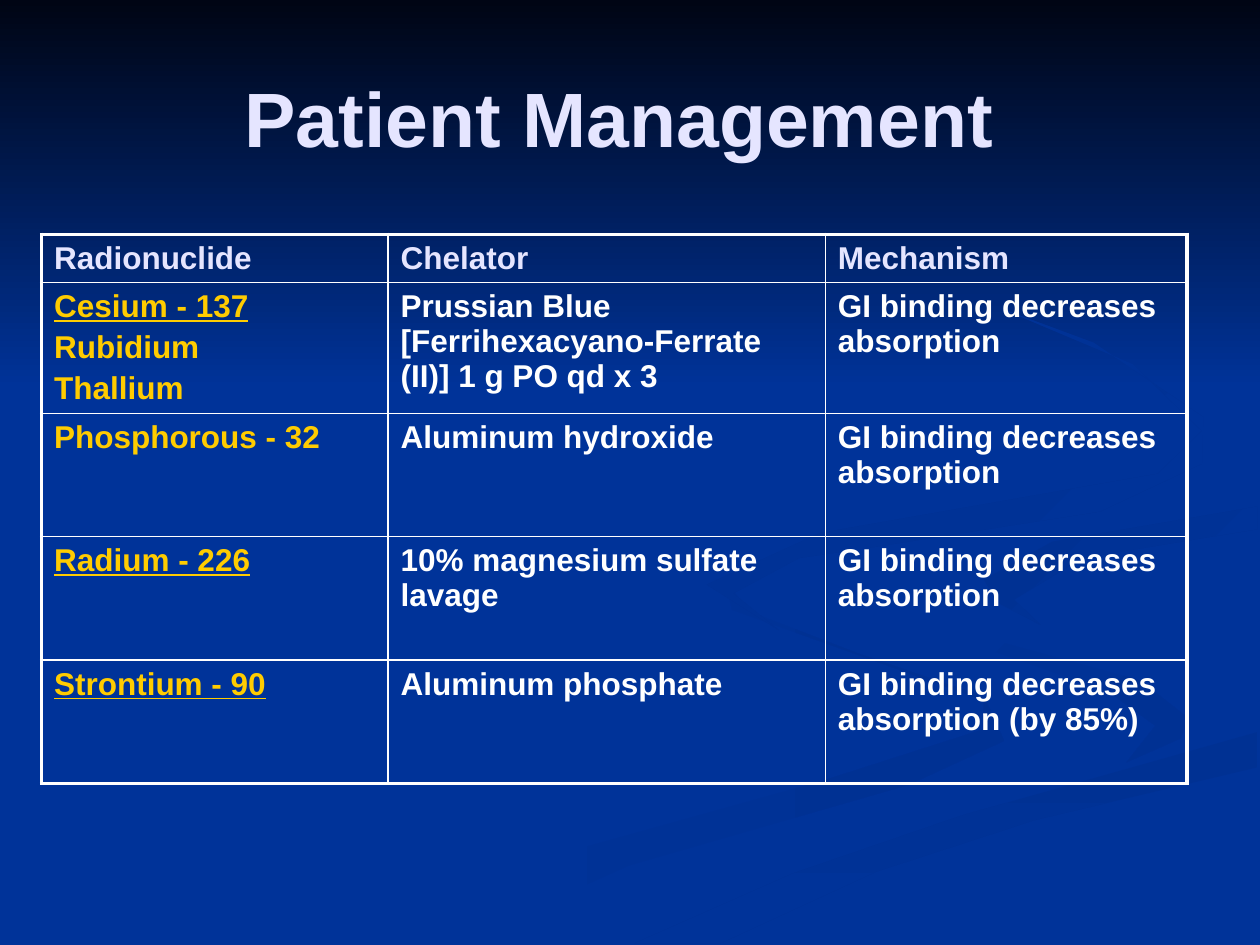
from dataclasses import dataclass

from lxml import etree
from pptx import Presentation
from pptx.dml.color import RGBColor
from pptx.enum.shapes import MSO_SHAPE
from pptx.enum.text import MSO_ANCHOR, PP_ALIGN
from pptx.oxml.ns import qn
from pptx.util import Pt

PX = 9144  # EMU per px, 100 px to the inch
TITLE_ONLY = 5
RECTANGLE = MSO_SHAPE.RECTANGLE
MIDDLE, CENTER = MSO_ANCHOR.MIDDLE, PP_ALIGN.CENTER


@dataclass(frozen=True)
class Theme:
    font: str = "Arial"
    blue: str = "003399"
    night: str = "000514"
    shade: str = "003193"
    pale: str = "E5E5FF"
    gold: str = "FFCC00"
    white: str = "FFFFFF"
    title_size: int = 44
    body_size: int = 18
    para_gap: float = 3.5
    frame: float = 2.25
    rule: float = 1


THEME = Theme()

# Outline points, start colour, end colour, clockwise gradient angle
SWIRLS = [
    ([(781, 553), (682, 519), (594, 485), (575, 459), (581, 484), (679, 519),
      (781, 556), (780, 579), (652, 620), (458, 674), (300, 749), (361, 749),
      (499, 687), (721, 623), (797, 588)], THEME.blue, THEME.shade, 0),
    ([(943, 570), (905, 540), (792, 509), (724, 464), (755, 505), (880, 549),
      (917, 576), (894, 605), (937, 586)], THEME.blue, THEME.shade, 45),
    ([(503, 749), (571, 749), (695, 692), (821, 651), (998, 609), (998, 581),
      (764, 647), (630, 693)], THEME.shade, THEME.blue, 90),
    ([(781, 460), (791, 478), (826, 496), (805, 476), (859, 443), (998, 420),
      (998, 402), (835, 430)], THEME.shade, THEME.blue, 45),
    ([(695, 434), (873, 406), (954, 368), (955, 331), (868, 272), (795, 245),
      (899, 289), (954, 342), (919, 376), (651, 423), (561, 464), (618, 500),
      (582, 471), (634, 443)], THEME.shade, THEME.blue, 45),
]

HEADINGS = ["Radionuclide", "Chelator", "Mechanism"]
BINDING = "GI binding decreases absorption"
TREATMENTS = [
    ["Cesium - 137\nRubidium\nThallium",
     "Prussian Blue [Ferrihexacyano-Ferrate (II)] 1 g PO qd x 3", BINDING],
    ["Phosphorous - 32", "Aluminum hydroxide", BINDING],
    ["Radium - 226", "10% magnesium sulfate lavage", BINDING],
    ["Strontium - 90", "Aluminum phosphate", BINDING + " (by 85%)"],
]
UNDERLINED = {"Cesium - 137", "Radium - 226", "Strontium - 90"}
COLUMN_WIDTHS = [275, 347, 287]
ROW_HEIGHTS = [38, 104, 98, 98, 98]


def px(*lengths):
    return [length * PX for length in lengths]


def style_font(font, size, color):
    font.name, font.size, font.bold = THEME.font, Pt(size), True
    font.color.rgb = RGBColor.from_string(color)


def paint_gradient(shape, start, end, angle):
    shape.shadow.inherit = False
    shape.line.fill.background()
    shape.fill.gradient()
    shape.fill.gradient_angle = -angle % 360
    for stop, color in zip(shape.fill.gradient_stops, (start, end)):
        stop.color.rgb = RGBColor.from_string(color)


def add_backdrop(page, box):
    left, top, width, height = box
    page.background.fill.solid()
    page.background.fill.fore_color.rgb = RGBColor.from_string(THEME.blue)
    sky = page.shapes.add_shape(RECTANGLE, *px(left, top, width, height))
    paint_gradient(sky, THEME.night, THEME.blue, 90)
    for points, start, end, angle in SWIRLS:
        outline = [(left + x, top + y) for x, y in points]
        builder = page.shapes.build_freeform(*outline[0], scale=PX)
        builder.add_line_segments(outline[1:], close=True)
        paint_gradient(builder.convert_to_shape(), start, end, angle)


def place_title(page, box, text):
    title = page.shapes.title
    title.left, title.top, title.width, title.height = px(*box)
    title.text_frame.text = text
    title.text_frame.vertical_anchor = MIDDLE
    para = title.text_frame.paragraphs[0]
    para.alignment = CENTER
    style_font(para.font, THEME.title_size, THEME.pale)
    page.shapes.element.append(title.element)  # in front of the backdrop


def draw_borders(cell, widths):
    """Set the left, right, top and bottom lines, with widths in points."""
    properties = cell._tc.get_or_add_tcPr()
    for index, (side, width) in enumerate(zip("LRTB", widths)):
        line = etree.Element(qn(f"a:ln{side}"), w=str(Pt(width)))
        fill = etree.SubElement(line, qn("a:solidFill"))
        etree.SubElement(fill, qn("a:srgbClr"), val=THEME.white)
        properties.insert(index, line)


def fill_cell(cell, text, color):
    cell.fill.background()
    cell.text = text
    for index, para in enumerate(cell.text_frame.paragraphs):
        style_font(para.font, THEME.body_size, color)
        para.font.underline = para.text in UNDERLINED
        para.space_before = Pt(THEME.para_gap if index else 0)


def add_treatment_table(page, left, top):
    rows = [HEADINGS, *TREATMENTS]
    last_row, last_column = len(rows) - 1, len(HEADINGS) - 1
    table = page.shapes.add_table(
        len(rows), len(HEADINGS),
        *px(left, top, sum(COLUMN_WIDTHS), sum(ROW_HEIGHTS))).table
    table.first_row = table.horz_banding = False
    for column, width in zip(table.columns, COLUMN_WIDTHS):
        column.width = width * PX
    for row, height in zip(table.rows, ROW_HEIGHTS):
        row.height = height * PX
    for r, texts in enumerate(rows):
        for c, text in enumerate(texts):
            color = THEME.pale if r == 0 else THEME.white if c else THEME.gold
            cell = table.cell(r, c)
            fill_cell(cell, text, color)
            on_edge = (c == 0, c == last_column, r == 0, r == last_row)
            draw_borders(cell, [THEME.frame if edge else THEME.rule
                                for edge in on_edge])


def main():
    deck = Presentation()
    deck.slide_width, deck.slide_height = px(1000, 750)
    page = deck.slides.add_slide(deck.slide_layouts[TITLE_ONLY])
    add_backdrop(page, (0, 0, 1000, 308))
    place_title(page, (50, 30, 900, 125), "Patient Management ")
    add_treatment_table(page, 33, 186)
    deck.save("out.pptx")


if __name__ == "__main__":
    main()
